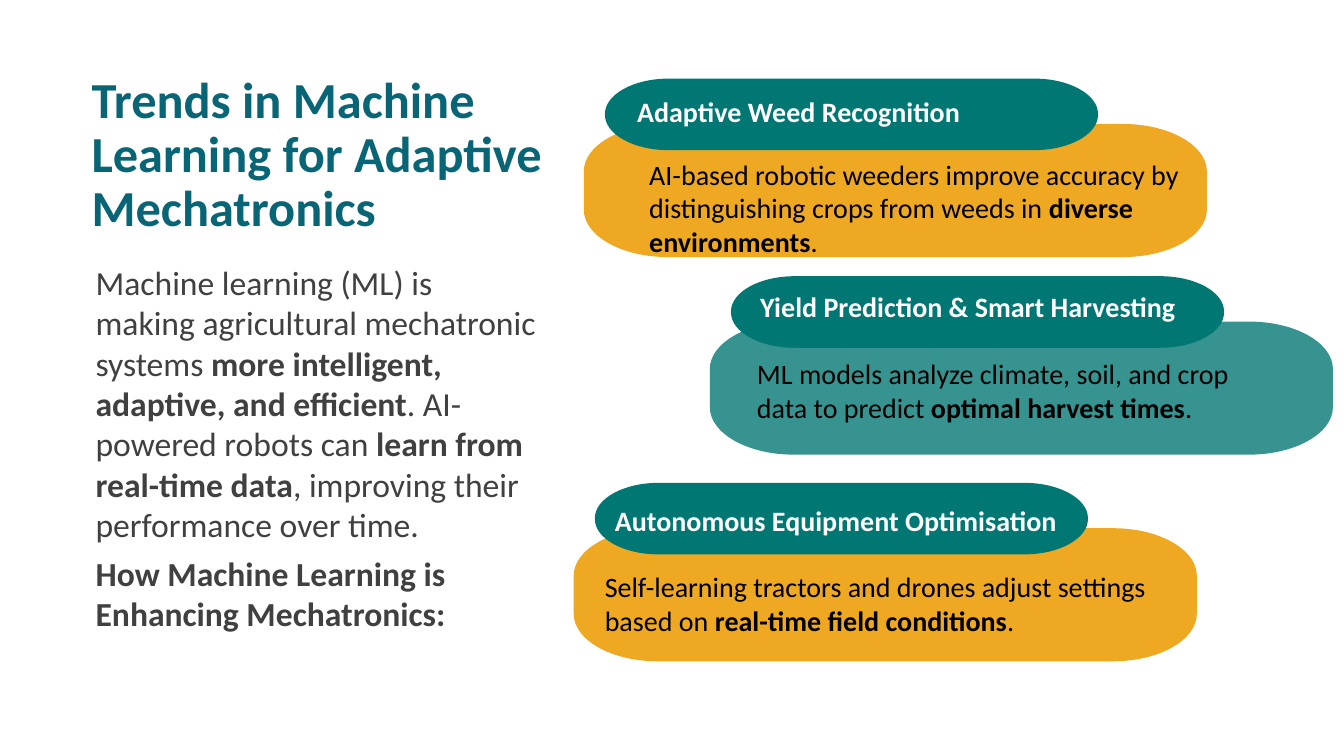
from dataclasses import dataclass

from lxml import etree
from pptx import Presentation
from pptx import util as u
from pptx.dml.color import RGBColor
from pptx.oxml import ns


@dataclass(frozen=True)
class Theme:
    font: str = "Calibri"
    title: str = "086575"
    intro: str = "404040"
    teal: str = "007772"
    amber: str = "EEA821"
    black: str = "000000"
    white: str = "FFFFFF"
    title_size: int = 36
    intro_size: int = 24
    card_size: int = 20


THEME = Theme()
CARD_SIZE = (6.18, 1.32)
CARD_RADII = (0.83, 0.47)
PILL_SIZE = (4.89, 0.71)
PILL_RADII = (0.63, 0.35)
PILL_OFFSET = (0.21, -0.45)
ARC_HANDLE = 0.55

# Card corner, fill, opacity, heading and its box, body runs and their box.
# Boxes are offsets from the card corner, then width and height.
CARDS = [
    ((5.79, 1.23), THEME.amber, 100,
     "Adaptive Weed Recognition", (0.43, -0.34, 4.89, 0.44),
     [("AI-based robotic weeders improve accuracy by distinguishing crops "
       "from weeds in ", False), ("diverse environments", True), (".", False)],
     (0.55, 0.28, 5.52, 1.11)),
    ((7.04, 3.19), THEME.teal, 79,
     "Yield Prediction & Smart Harvesting", (0.4, -0.37, 4.42, 0.44),
     [("ML models analyze climate, soil, and crop data to predict ", False),
      ("optimal harvest times", True), (".", False)],
     (0.37, 0.3, 5.07, 0.77)),
    ((5.69, 5.24), THEME.amber, 100,
     "Autonomous Equipment Optimisation", (0.31, -0.29, 4.78, 0.44),
     [("Self-learning tractors and drones adjust settings based on ", False),
      ("real-time field conditions", True), (".", False)],
     (0.21, 0.36, 5.77, 0.77)),
]

INTRO = [
    [("Machine learning (ML) is making agricultural mechatronic systems ", False),
     ("more intelligent, adaptive, and efficient", True),
     (". AI-powered robots can ", False),
     ("learn from real-time data", True),
     (", improving their performance over time.", False)],
    [("How Machine Learning is Enhancing Mechatronics:", True)],
]


def add_text(slide, box, paragraphs, size, color):
    """Add a text box; each paragraph is a list of (text, bold) runs."""
    shape = slide.shapes.add_textbox(*map(u.Inches, box))
    frame = shape.text_frame
    frame.word_wrap = True
    for index, runs in enumerate(paragraphs):
        paragraph = frame.add_paragraph() if index else frame.paragraphs[0]
        if index:
            paragraph.space_before = u.Pt(6)
        for text, bold in runs:
            run = paragraph.add_run()
            run.text = text
            run.font.name = THEME.font
            run.font.size = u.Pt(size)
            run.font.bold = bold
            run.font.color.rgb = RGBColor.from_string(color)
    return frame


def round_corners(shape):
    """Turn every second segment of the outline into a quarter ellipse."""
    points = list(shape._element.iter(ns.qn("a:pt")))
    for index in range(2, len(points), 2):
        start, end = [(int(point.get("x")), int(point.get("y")))
                      for point in points[index - 1:index + 1]]
        if index % 4 == 2:
            corner = (end[0], start[1])
        else:
            corner = (start[0], end[1])
        segment = points[index].getparent()
        segment.tag = ns.qn("a:cubicBezTo")
        for position, anchor in enumerate((start, end)):
            x, y = [round(a + ARC_HANDLE * (c - a)) for a, c in zip(anchor, corner)]
            handle = etree.Element(ns.qn("a:pt"), x=str(x), y=str(y))
            segment.insert(position, handle)


def add_lozenge(slide, corner, size, radii, color, opacity=100):
    """Add a rectangle whose corners are quarter ellipses."""
    (left, top), (width, height), (rx, ry) = corner, size, radii
    right, bottom = left + width, top + height
    outline = [(right - rx, bottom), (left + rx, bottom),
               (left, bottom - ry), (left, top + ry),
               (left + rx, top), (right - rx, top),
               (right, top + ry), (right, bottom - ry),
               (right - rx, bottom)]
    points = [(u.Inches(x), u.Inches(y)) for x, y in outline]
    builder = slide.shapes.build_freeform(*points[0])
    builder.add_line_segments(points[1:], close=True)
    shape = builder.convert_to_shape()
    round_corners(shape)
    shape.shadow.inherit = False
    shape.line.fill.background()
    shape.fill.solid()
    shape.fill.fore_color.rgb = RGBColor.from_string(color)
    if opacity < 100:
        fill_color = shape._element.spPr.find(".//" + ns.qn("a:srgbClr"))
        etree.SubElement(fill_color, ns.qn("a:alpha"), val=str(opacity * 1000))


def add_card(slide, corner, color, opacity, heading, heading_box, body, body_box):
    left, top = corner

    def place(box):
        return (left + box[0], top + box[1], *box[2:])

    add_lozenge(slide, corner, CARD_SIZE, CARD_RADII, color, opacity)
    add_lozenge(slide, place(PILL_OFFSET), PILL_SIZE, PILL_RADII, THEME.teal)
    add_text(slide, place(heading_box), [[(heading, True)]],
             THEME.card_size, THEME.white)
    add_text(slide, place(body_box), [body], THEME.card_size, THEME.black)


def add_introduction(slide, left, top):
    add_text(slide, (left + 0.04, top + 1.86, 4.58, 3.9), INTRO,
             THEME.intro_size, THEME.intro)
    title = "Trends in Machine Learning for Adaptive Mechatronics"
    frame = add_text(slide, (left, top, 4.92, 1.64), [[(title, True)]],
                     THEME.title_size, THEME.title)
    frame.paragraphs[0].line_spacing = 0.9


def main():
    presentation = Presentation()
    presentation.slide_width = u.Inches(13.33)
    presentation.slide_height = u.Inches(7.5)
    slide = presentation.slides.add_slide(presentation.slide_layouts[6])
    for card in CARDS:
        add_card(slide, *card)
    add_introduction(slide, 0.81, 0.69)
    presentation.save("out.pptx")


if __name__ == "__main__":
    main()
